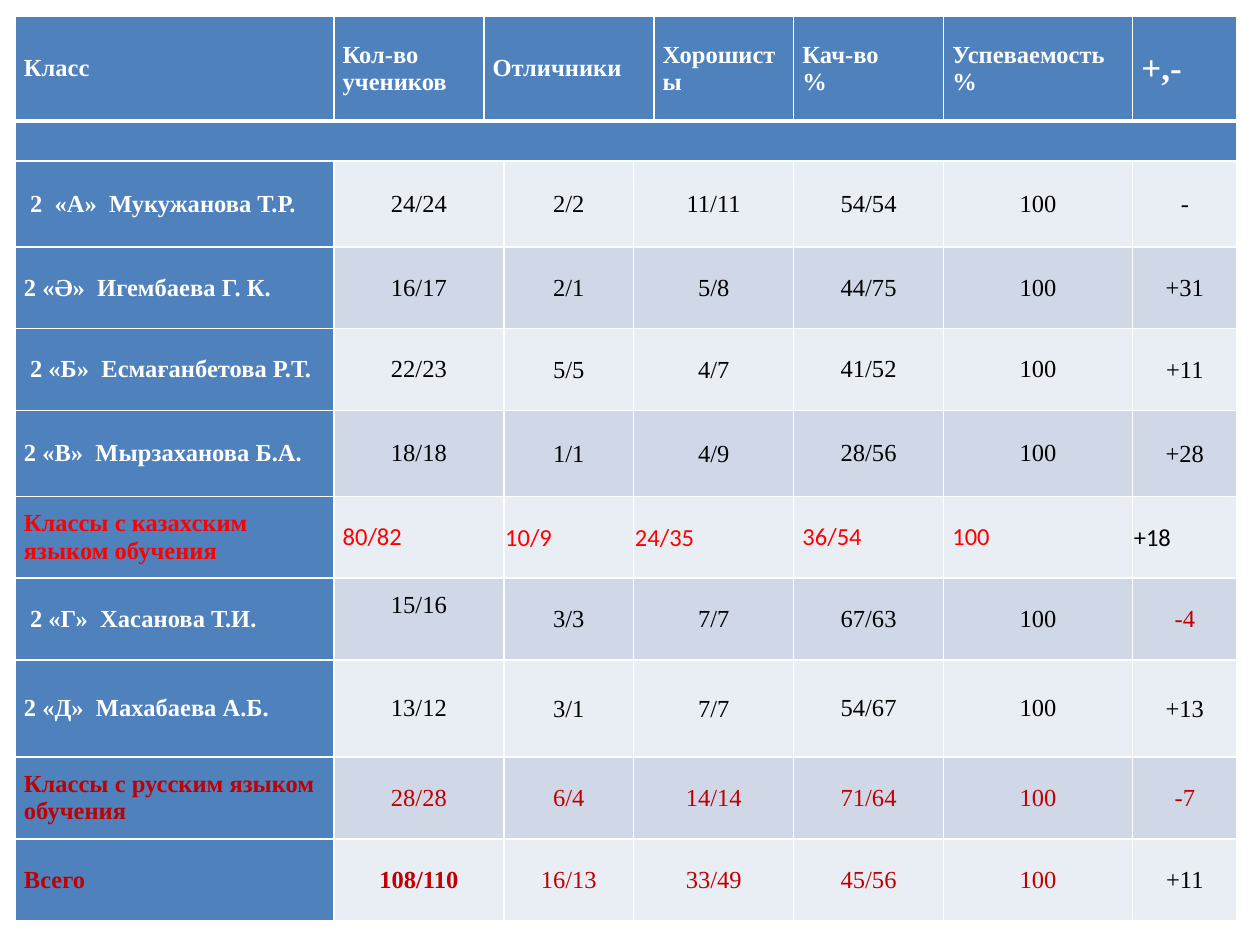
from lxml import etree
from pptx import Presentation
from pptx.dml.color import RGBColor
from pptx.enum.text import MSO_ANCHOR, PP_ALIGN
from pptx.oxml.ns import qn
from pptx.util import Inches, Pt

MIDDLE = MSO_ANCHOR.MIDDLE
LEFT = PP_ALIGN.LEFT
CENTER = PP_ALIGN.CENTER

WHITE = RGBColor(0xFF, 0xFF, 0xFF)
BLACK = RGBColor(0x00, 0x00, 0x00)
BLUE = RGBColor(0x4F, 0x81, 0xBD)
LIGHT = RGBColor(0xE9, 0xED, 0xF4)
MEDIUM = RGBColor(0xD0, 0xD8, 0xE8)
RED = RGBColor(0xFF, 0x00, 0x00)
DARK_RED = RGBColor(0xC0, 0x00, 0x00)

SERIF = "Times New Roman"
SANS = "Calibri"

SLIDE_WIDTH, SLIDE_HEIGHT = Inches(10), Inches(7.5)
TABLE_BOX = (Inches(0.12), Inches(0.13), Inches(9.7), Inches(7.18))
COLUMN_WEIGHTS = [2.53, 1.19, 0.16, 1.03, 0.16, 1.11, 1.19, 1.5, 0.83]
ROW_WEIGHTS = [0.83, 0.32, 0.68, 0.65, 0.65, 0.68, 0.65, 0.65, 0.77, 0.65, 0.65]

HEADER_SPANS = [(0, 0), (1, 1), (2, 4), (5, 5), (6, 6), (7, 7), (8, 8)]
BODY_SPANS = [(0, 0), (1, 2), (3, 3), (4, 5), (6, 6), (7, 7), (8, 8)]
NARROW_MARGIN_COLUMNS = (3, 4, 8)

HEADERS = ["Класс", "Кол-во учеников", "Отличники", "Хорошисты",
           "Кач-во\n%", "Успеваемость\n%", "+,-"]
CLASS_ROWS = [
    [" 2  «А»  Мукужанова Т.Р.", "24/24", "2/2", "11/11", "54/54", "100", "-"],
    ["2 «Ә»  Игембаева Г. К.", "16/17", "2/1", "5/8", "44/75", "100", "+31"],
    [" 2 «Б»  Есмағанбетова Р.Т.", "22/23", "5/5", "4/7", "41/52", "100", "+11"],
    ["2 «В»  Мырзаханова Б.А.", "18/18", "1/1", "4/9", "28/56", "100", "+28"],
    ["Классы с казахским языком обучения", "80/82", "10/9", "24/35", "36/54", "100", "+18"],
    [" 2 «Г»  Хасанова Т.И.", "15/16", "3/3", "7/7", "67/63", "100", "-4"],
    ["2 «Д»  Махабаева А.Б.", "13/12", "3/1", "7/7", "54/67", "100", "+13"],
    ["Классы с русским языком обучения", "28/28", "6/4", "14/14", "71/64", "100", "-7"],
    ["Всего", "108/110", "16/13", "33/49", "45/56", "100", "+11"],
]
KAZAKH_TOTAL, RUSSIAN_TOTAL, GRAND_TOTAL = 4, 7, 8
TOTAL_COLORS = {KAZAKH_TOTAL: RED, RUSSIAN_TOTAL: DARK_RED, GRAND_TOTAL: DARK_RED}


def write_text(cell, text, size=14, font=SERIF, color=BLACK, bold=False, align=LEFT):
    cell.text = text
    for paragraph in cell.text_frame.paragraphs:
        paragraph.alignment = align
        for run in paragraph.runs:
            run.font.size = Pt(size)
            run.font.name = font
            run.font.color.rgb = color
            run.font.bold = bold


def set_margins(cell, side, top=0, bottom=0):
    cell.margin_left = cell.margin_right = Inches(side)
    cell.margin_top = Inches(top)
    cell.margin_bottom = Inches(bottom)
    cell.vertical_anchor = MIDDLE


def set_borders(cell, bottom_width=1):
    properties = cell._tc.get_or_add_tcPr()
    widths = {"a:lnL": 1, "a:lnR": 1, "a:lnT": 1, "a:lnB": bottom_width}
    for index, (tag, width) in enumerate(widths.items()):
        line = etree.Element(qn(tag), w=str(Pt(width)))
        fill = etree.SubElement(line, qn("a:solidFill"))
        etree.SubElement(fill, qn("a:srgbClr"), val=str(WHITE))
        properties.insert(index, line)


def paint_row(table, row, first_color, other_color, bottom_width=1):
    for column in range(len(COLUMN_WEIGHTS)):
        cell = table.cell(row, column)
        cell.fill.solid()
        cell.fill.fore_color.rgb = other_color if column else first_color
        set_borders(cell, bottom_width)


def merge_row(table, row, spans):
    for first, last in spans:
        if last > first:
            table.cell(row, first).merge(table.cell(row, last))


def fill_header(table):
    paint_row(table, 0, BLUE, BLUE, bottom_width=3)
    merge_row(table, 0, HEADER_SPANS)
    for (column, _), text in zip(HEADER_SPANS, HEADERS):
        cell = table.cell(0, column)
        set_margins(cell, 0.07)
        write_text(cell, text, size=20 if text == "+,-" else 14, color=WHITE, bold=True)


def fill_divider(table):
    paint_row(table, 1, BLUE, BLUE)
    merge_row(table, 1, [(0, len(COLUMN_WEIGHTS) - 1)])
    set_margins(table.cell(1, 0), 0.07)


def value_color(index, column, text):
    if column == 8:
        return DARK_RED if text in ("-4", "-7") else BLACK
    return TOTAL_COLORS.get(index, BLACK)


def fill_class_row(table, index, texts):
    row = index + 2
    paint_row(table, row, BLUE, MEDIUM if index % 2 else LIGHT)
    merge_row(table, row, BODY_SPANS)
    for (column, _), text in zip(BODY_SPANS, texts):
        cell = table.cell(row, column)
        narrow = column in NARROW_MARGIN_COLUMNS and (index, column) != (GRAND_TOTAL, 8)
        raised = text == "15/16"
        set_margins(cell, 0.01 if narrow else 0.07, top=0.01 if narrow else 0,
                    bottom=0.22 if raised else 0)
        if column == 0:
            write_text(cell, text, color=TOTAL_COLORS.get(index, WHITE), bold=True)
        else:
            kazakh = index == KAZAKH_TOTAL
            write_text(cell, text, font=SANS if kazakh else SERIF,
                       color=value_color(index, column, text),
                       bold=text == "108/110", align=LEFT if kazakh else CENTER)


def add_results_table(slide, box):
    left, top, width, height = box
    table = slide.shapes.add_table(len(ROW_WEIGHTS), len(COLUMN_WEIGHTS),
                                   left, top, width, height).table
    table.first_row = False
    table.horz_banding = False
    for column, weight in zip(table.columns, COLUMN_WEIGHTS):
        column.width = int(width * weight / sum(COLUMN_WEIGHTS))
    for row, weight in zip(table.rows, ROW_WEIGHTS):
        row.height = int(height * weight / sum(ROW_WEIGHTS))
    fill_header(table)
    fill_divider(table)
    for index, texts in enumerate(CLASS_ROWS):
        fill_class_row(table, index, texts)


def main():
    presentation = Presentation()
    presentation.slide_width = SLIDE_WIDTH
    presentation.slide_height = SLIDE_HEIGHT
    slide = presentation.slides.add_slide(presentation.slide_layouts[6])
    add_results_table(slide, TABLE_BOX)
    presentation.save("out.pptx")


if __name__ == "__main__":
    main()
